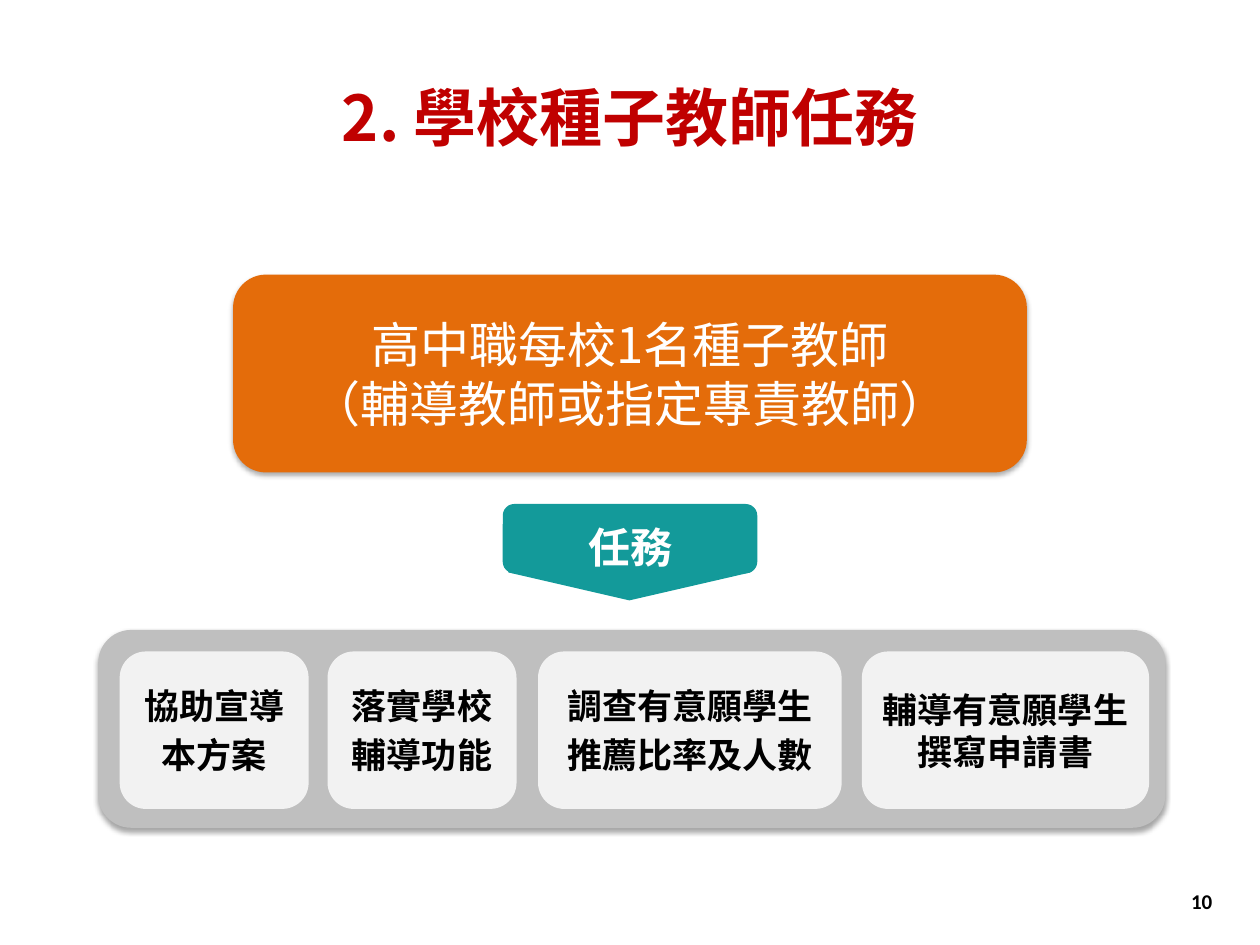
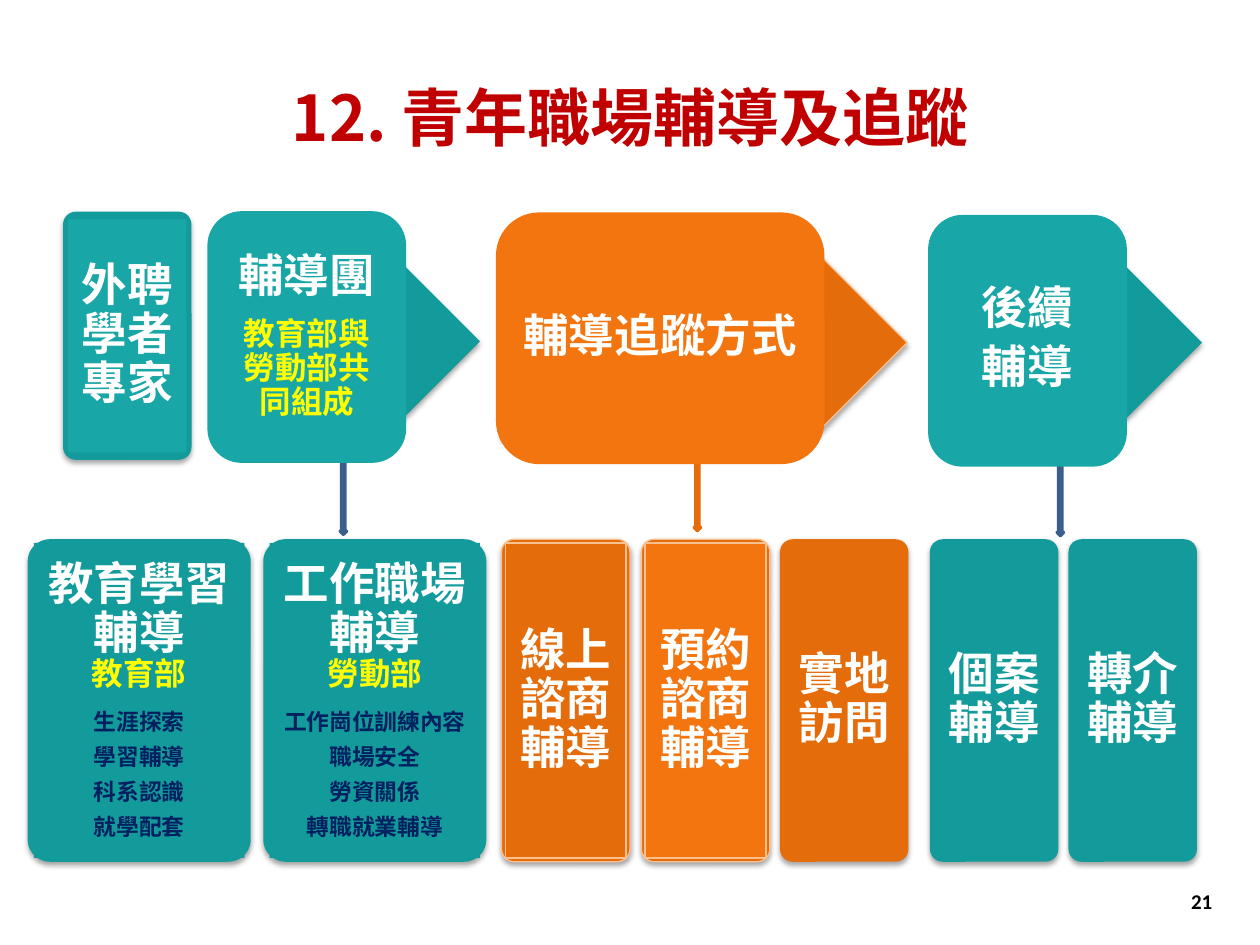
import dataclasses

import pptx
import pptx.dml.color
import pptx.enum.shapes
import pptx.enum.text
import pptx.oxml
import pptx.oxml.ns
import pptx.util
from pptx.util import Inches

COLORS = {
    "red": "C00000", "white": "FFFFFF", "black": "000000", "yellow": "FFFF00",
    "navy": "002060", "orange": "E46C0A", "bright_orange": "F2750F",
    "peach": "FAC090", "teal": "139B9B", "tab_teal": "139A9A",
    "light_teal": "19A6A6", "arrow_teal": "31859C", "blue": "3A5F8C",
    "gray": "BFBFBF", "pale": "F2F2F2",
}
FONT = "Noto Sans CJK SC"
SHAPE = pptx.enum.shapes.MSO_SHAPE
ALIGN = pptx.enum.text.PP_ALIGN
ANCHOR = pptx.enum.text.MSO_ANCHOR
SHADOW = (
    f'<a:effectLst {pptx.oxml.ns.nsdecls("a")}>'
    '<a:outerShdw blurRad="39370" dist="22860" dir="5400000" rotWithShape="0">'
    '<a:srgbClr val="000000"><a:alpha val="35000"/></a:srgbClr>'
    '</a:outerShdw></a:effectLst>'
)


@dataclasses.dataclass
class Line:
    text: str
    size: float = 26
    color: str = "white"
    bold: bool = True
    spacing: object = None
    before: float = 0
    after: float = 0
    align: object = ALIGN.CENTER
    font: str = FONT


class Deck:
    def __init__(self):
        self.presentation = pptx.Presentation()
        self.presentation.slide_width = Inches(10)
        self.presentation.slide_height = Inches(7.5)
        self.slide = None

    def color(self, name):
        return pptx.dml.color.RGBColor.from_string(COLORS[name])

    def new_slide(self, title, number):
        self.slide = self.presentation.slides.add_slide(self.presentation.slide_layouts[6])
        self.text(0, 0.62, 10, 0.61, [Line(title, 36, "red")])
        self.text(7.39, 6.95, 2.33, 0.4,
                  [Line(number, 12, "black", align=ALIGN.RIGHT, font="Calibri")])

    def fill_text(self, frame, lines, inset=0.1, anchor=ANCHOR.MIDDLE):
        frame.word_wrap = True
        frame.vertical_anchor = anchor
        frame.margin_left = frame.margin_right = Inches(inset)
        frame.margin_top = frame.margin_bottom = Inches(0.05)
        for index, line in enumerate(lines):
            paragraph = frame.add_paragraph() if index else frame.paragraphs[0]
            paragraph.text = line.text
            paragraph.alignment = line.align
            if line.spacing:
                paragraph.line_spacing = line.spacing
            if line.before and index:
                paragraph.space_before = pptx.util.Pt(line.before)
            if line.after:
                paragraph.space_after = pptx.util.Pt(line.after)
            font = paragraph.font
            font.name = line.font
            font.size = pptx.util.Pt(line.size)
            font.bold = line.bold
            font.color.rgb = self.color(line.color)
            defaults = paragraph._p.pPr.find(pptx.oxml.ns.qn("a:defRPr"))
            defaults.append(pptx.oxml.parse_xml(
                f'<a:ea {pptx.oxml.ns.nsdecls("a")} typeface="{line.font}"/>'))

    def text(self, left, top, width, height, lines, anchor=ANCHOR.MIDDLE):
        box = self.slide.shapes.add_textbox(
            Inches(left), Inches(top), Inches(width), Inches(height))
        self.fill_text(box.text_frame, lines, anchor=anchor)

    def shape(self, kind, left, top, width, height, fill, lines=(), border=None,
              border_width=0.75, shadow=False, corner=None, inset=0.1):
        shape = self.slide.shapes.add_shape(
            kind, Inches(left), Inches(top), Inches(width), Inches(height))
        shape.fill.solid()
        shape.fill.fore_color.rgb = self.color(fill)
        if border:
            shape.line.color.rgb = self.color(border)
            shape.line.width = pptx.util.Pt(border_width)
        else:
            shape.line.fill.background()
        if shadow:
            shape._element.spPr.append(pptx.oxml.parse_xml(SHADOW))
        else:
            shape.shadow.inherit = False
        if corner is not None:
            shape.adjustments[0] = corner
        if lines:
            self.fill_text(shape.text_frame, lines, inset)
        return shape

    def panel(self, left, top, width, height, fill, lines, border=None,
              face=None, margin=(0.03, 0.03)):
        across, down = margin
        self.shape(SHAPE.ROUNDED_RECTANGLE, left, top, width, height, fill,
                   border=border, shadow=True, corner=0.1)
        self.shape(SHAPE.RECTANGLE, left + across, top + down, width - 2 * across,
                   height - 2 * down, face or fill, lines, border, inset=0.05)

    def stage(self, left, top, width, fill, lines):
        self.shape(SHAPE.ROUNDED_RECTANGLE, left, top, width, 1.97, fill, lines,
                   border=fill, border_width=2)

    def pointer(self, left, top, height, fill, border):
        self.shape(SHAPE.DOWN_ARROW, left, top, 0.05, height, fill,
                   border=border, border_width=2)


def teacher_tasks(deck):
    deck.new_slide("2. 學校種子教師任務", "10")
    teachers = ["高中職每校1名種子教師", "（輔導教師或指定專責教師）"]
    deck.shape(SHAPE.ROUNDED_RECTANGLE, 1.85, 2.18, 6.3, 1.57, "orange",
               [Line(text, 28, bold=False) for text in teachers], shadow=True)

    deck.shape(SHAPE.ROUNDED_RECTANGLE, 0.78, 5, 8.47, 1.57, "gray", shadow=True)
    tasks = [
        (0.95, 1.5, ["協助宣導", "本方案"]),
        (2.6, 1.5, ["落實學校", "輔導功能"]),
        (4.27, 2.41, ["調查有意願學生", "推薦比率及人數"]),
        (6.84, 2.28, ["輔導有意願學生撰寫申請書"]),
    ]
    for left, width, texts in tasks:
        deck.shape(SHAPE.ROUNDED_RECTANGLE, left, 5.17, width, 1.25, "pale",
                   [Line(text, 20, "black", before=4) for text in texts], inset=0.05)

    tab_point = deck.shape(SHAPE.PENTAGON, 4.79, 3.6, 0.41, 1.92, "tab_teal", corner=0.54)
    tab_point.rotation = 90
    deck.shape(SHAPE.ROUNDED_RECTANGLE, 3.99, 4, 2.02, 0.55, "tab_teal")
    deck.text(3.99, 4.05, 2.02, 0.51, [Line("任務", 24, spacing=1.1)], ANCHOR.TOP)


def workplace_guidance(deck):
    deck.new_slide("12. 青年職場輔導及追蹤", "21")
    deck.panel(0.5, 1.68, 1.02, 1.97, "teal", [Line("外聘學者專家", spacing=0.9)],
               face="light_teal", margin=(0.04, 0.06))

    for left, top, width, fill, border in [
        (1.69, 1.96, 2.12, "teal", None),
        (3.98, 1.97, 3.22, "orange", "peach"),
        (7.42, 1.97, 2.12, "teal", None),
    ]:
        deck.shape(SHAPE.PENTAGON, left, top, width, 1.5, fill, border=border, shadow=True)

    programs = [
        (0.22, "教育學習輔導", "教育部",
         ["生涯探索", "學習輔導", "科系認識", "就學配套"]),
        (2.09, "工作職場輔導", "勞動部",
         ["工作崗位訓練內容", "職場安全", "勞資關係", "轉職就業輔導"]),
    ]
    for left, program, ministry, topics in programs:
        lines = [Line(program, spacing=0.9, after=6),
                 Line(ministry, 18, "yellow", spacing=0.5, after=6)]
        lines += [Line(topic, 13, "navy", spacing=pptx.util.Pt(20)) for topic in topics]
        deck.panel(left, 4.28, 1.77, 2.56, "teal", lines, margin=(0.05, 0.03))

    services = [
        (3.98, "線上諮商輔導", "orange", "orange", "peach"),
        (5.09, "預約諮商輔導", "orange", "bright_orange", "peach"),
        (6.19, "實地訪問", "orange", "orange", None),
        (7.38, "個案輔導", "teal", "teal", None),
        (8.48, "轉介輔導", "teal", "teal", None),
    ]
    for left, service, fill, face, border in services:
        deck.panel(left, 4.28, 1.02, 2.56, fill, [Line(service, spacing=0.9)], border, face)

    deck.pointer(2.7, 3.49, 0.75, "arrow_teal", "blue")
    deck.pointer(8.39, 3.46, 0.79, "arrow_teal", "blue")
    deck.pointer(5.51, 3.52, 0.69, "orange", "orange")

    deck.stage(1.66, 1.69, 1.55, "light_teal", [
        Line("輔導團", spacing=0.9, after=9),
        Line("教育部與勞動部共同組成", 18, "yellow", spacing=0.9)])
    deck.stage(7.38, 1.72, 1.55, "light_teal",
               [Line(text, spacing=0.8, after=9) for text in ("後續", "輔導")])
    deck.stage(3.95, 1.7, 2.58, "bright_orange", [Line("輔導追蹤方式", spacing=0.9)])


def main():
    deck = Deck()
    teacher_tasks(deck)
    workplace_guidance(deck)
    deck.presentation.save("out.pptx")


if __name__ == "__main__":
    main()
